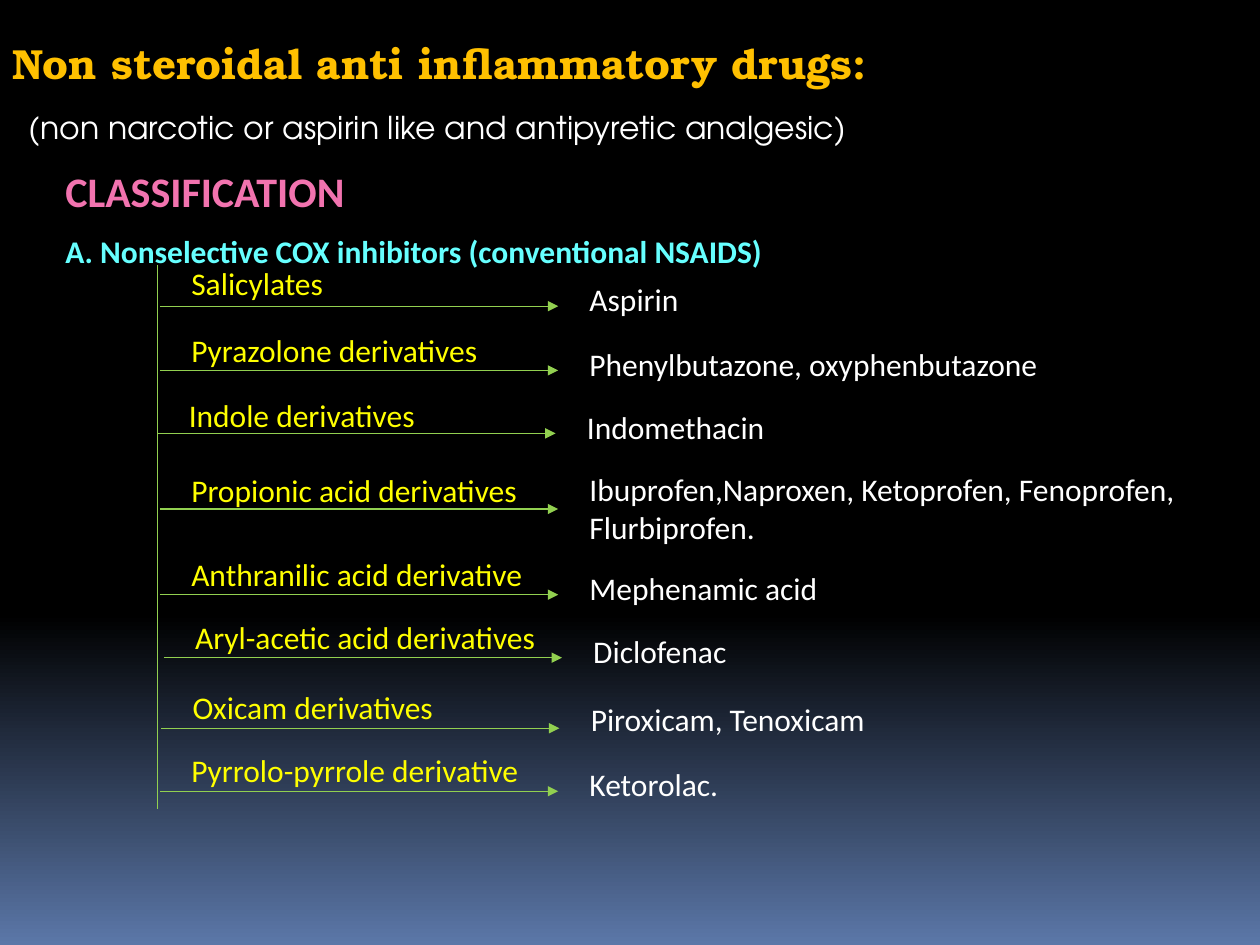
import pptx
import pptx.dml.color
import pptx.enum.shapes
import pptx.enum.text
import pptx.oxml
import pptx.oxml.ns
import pptx.util

COLORS = {
    "sky_top": "000000", "sky_bottom": "5B77A8", "title": "FFC000",
    "subtitle": "FFFFFF", "heading": "F273AF", "group": "66FFFF",
    "family": "FFFF00", "drugs": "FFFFFF", "branch": "92D050",
}
BODY, TITLE, SUBTITLE = "Calibri", "TeX Gyre Bonum", "TeX Gyre Adventor"

# family, drugs, family top, drugs top, arrow height, shift to the right
CLASSES = [
    ("Salicylates", "Aspirin", 2.05, 2.17, 2.43, 0),
    ("Pyrazolone derivatives", "Phenylbutazone, oxyphenbutazone", 2.58, 2.69, 2.94, 0),
    ("Indole derivatives", "Indomethacin", 3.09, 3.19, 3.44, -0.02),
    ("Propionic acid derivatives",
     "Ibuprofen,Naproxen, Ketoprofen, Fenoprofen, Flurbiprofen.", 3.69, 3.68, 4.04, 0),
    ("Anthranilic acid derivative", "Mephenamic acid", 4.36, 4.47, 4.72, 0),
    ("Aryl-acetic acid derivatives", "Diclofenac", 4.86, 4.97, 5.22, 0.03),
    ("Oxicam derivatives", "Piroxicam, Tenoxicam", 5.41, 5.51, 5.78, 0.01),
    ("Pyrrolo-pyrrole derivative", "Ketorolac.", 5.91, 6.02, 6.28, 0),
]
TRUNK_X, TRUNK_TOP, TRUNK_BOTTOM = 1.25, 2.1, 6.42
ARROW_X, ARROW_LENGTH = 1.27, 3.16
FAMILY_X, FAMILY_WIDTH = 1.42, 3
DRUGS_X, DRUGS_WIDTH = 4.58, 4.92
ROW_HEIGHT = 0.4

inches = pptx.util.Inches


def rgb(name):
    return pptx.dml.color.RGBColor.from_string(COLORS[name])


def add_text(slide, left, top, width, height, lines, from_bottom=False):
    """Add a text box; each line is (text, size, colour name, font, bold)."""
    box = slide.shapes.add_textbox(*map(inches, (left, top, width, height)))
    frame = box.text_frame
    frame.word_wrap = True
    if from_bottom:
        frame.vertical_anchor = pptx.enum.text.MSO_ANCHOR.BOTTOM
    for number, (text, size, color, font, bold) in enumerate(lines):
        paragraph = frame.add_paragraph() if number else frame.paragraphs[0]
        paragraph.text = text
        paragraph.font.size = pptx.util.Pt(size)
        paragraph.font.name = font
        paragraph.font.bold = bold
        paragraph.font.color.rgb = rgb(color)
        if number:
            paragraph.space_before = pptx.util.Pt(size / 2)
    return frame


def add_branch(slide, x1, y1, x2, y2, arrow=False):
    branch = slide.shapes.add_connector(
        pptx.enum.shapes.MSO_CONNECTOR.STRAIGHT, *map(inches, (x1, y1, x2, y2)))
    branch.line.color.rgb = rgb("branch")
    branch.line.width = pptx.util.Pt(0.75)
    if arrow:
        tail = pptx.oxml.parse_xml(
            f'<a:tailEnd {pptx.oxml.ns.nsdecls("a")} type="triangle"/>')
        branch.line._get_or_add_ln().append(tail)
    branch._element.spPr.append(
        pptx.oxml.parse_xml(f'<a:effectLst {pptx.oxml.ns.nsdecls("a")}/>'))


def paint_background(slide):
    fill = slide.background.fill
    fill.gradient()
    fill.gradient_angle = 270
    for stop, color, position in zip(
            fill.gradient_stops, ("sky_top", "sky_bottom"), (0.65, 1)):
        stop.color.rgb = rgb(color)
        stop.position = position


def main():
    deck = pptx.Presentation()
    deck.slide_width, deck.slide_height = inches(10), inches(7.5)
    slide = deck.slides.add_slide(deck.slide_layouts[6])
    paint_background(slide)

    add_text(slide, 0.42, 0.83, 9.25, 1.36, [
        ("CLASSIFICATION", 24, "heading", BODY, True),
        ("A. Nonselective COX inhibitors (conventional NSAIDS)", 18, "group", BODY, True),
    ], from_bottom=True)

    add_branch(slide, TRUNK_X, TRUNK_TOP, TRUNK_X, TRUNK_BOTTOM)
    for family, drugs, family_top, drugs_top, arrow_y, shift in CLASSES:
        start = ARROW_X + shift
        add_branch(slide, start, arrow_y, start + ARROW_LENGTH, arrow_y, arrow=True)
        drugs_height = 0.7 if len(drugs) > 40 else ROW_HEIGHT
        add_text(slide, DRUGS_X + shift, drugs_top, DRUGS_WIDTH, drugs_height,
                 [(drugs, 18, "drugs", BODY, False)])
        add_text(slide, FAMILY_X + shift, family_top, FAMILY_WIDTH, ROW_HEIGHT,
                 [(family, 18, "family", BODY, False)])

    add_text(slide, 0, 0.25, 10.25, 0.91,
             [("Non steroidal anti inflammatory drugs:", 24, "title", TITLE, True)])
    subtitle = add_text(
        slide, 0, 0.5, 10, 0.71,
        [("(non narcotic or aspirin like and antipyretic analgesic)",
          18, "subtitle", SUBTITLE, False)], from_bottom=True)
    subtitle.margin_left = inches(0.23)

    deck.save("out.pptx")


if __name__ == "__main__":
    main()
